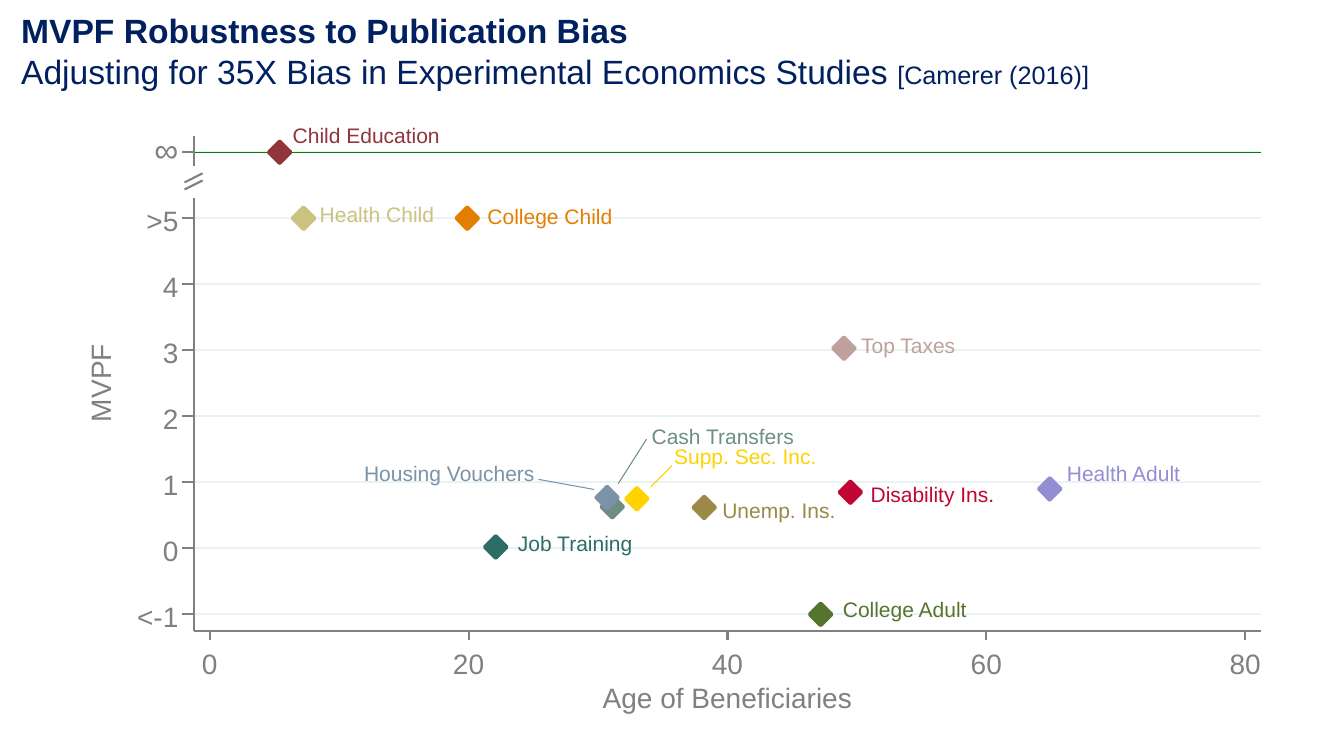
from pptx import Presentation
from pptx.dml.color import RGBColor
from pptx.enum.shapes import MSO_CONNECTOR, MSO_SHAPE
from pptx.enum.text import MSO_ANCHOR, MSO_AUTO_SIZE, PP_ALIGN
from pptx.oxml.ns import qn
from pptx.util import Inches, Pt
from lxml.etree import SubElement

# Content
HEAD = "MVPF Robustness to Publication Bias"
SUB = "Adjusting for 35X Bias in Experimental Economics Studies "
CITE = "[Camerer (2016)]"
NAVY, GREY, GRID, GREEN = "002060", "808080", "EAF2F3", "008000"
ROWS = {-1: "<-1", 0: "0", 1: "1", 2: "2", 3: "3", 4: "4", 5: ">5", 6: "∞"}
AGES = range(0, 81, 20)

# Name, age, MVPF, colour, label offset from the marker in inches
POINTS = [
    ("Cash Transfers", 31.1, 0.63, "6E8E84", (0.39, -0.83)),
    ("Child Education", 5.4, 6, "90353B", (0.13, -0.29)),
    ("College Adult", 47.2, -1, "55752F", (0.22, -0.18)),
    ("College Child", 19.9, 5, "E37E00", (0.2, -0.15)),
    ("Disability Ins.", 49.5, 0.85, "C10534", (0.2, -0.11)),
    ("Health Adult", 64.9, 0.9, "938DD2", (0.17, -0.28)),
    ("Health Child", 7.25, 5, "CAC27E", (0.16, -0.17)),
    ("Housing Vouchers", 30.7, 0.77, "7B92A8", (-2.41, -0.37)),
    ("Job Training", 22.1, 0.02, "2D6D66", (0.22, -0.16)),
    ("Supp. Sec. Inc.", 33, 0.75, "FFD200", (0.37, -0.55)),
    ("Top Taxes", 49, 3.03, "BFA19C", (0.17, -0.16)),
    ("Unemp. Ins.", 38.2, 0.62, "9C8847", (0.18, -0.1)),
]
# Leader ends, as offsets from the marker
LEADS = {
    "Cash Transfers": (0.06, -0.23, 0.34, -0.67),
    "Housing Vouchers": (-0.68, -0.18, -0.13, -0.08),
    "Supp. Sec. Inc.": (0.14, -0.12, 0.35, -0.33),
}

# Plot frame in inches
LEFT, RIGHT, TOP, BASE = 1.92, 12.51, 1.35, 6.26
GAP = (1.65, 1.96)
MID = (LEFT + RIGHT) / 2
SIZE = 0.22


def get_x(age):
    return 2.08 + age * 10.27 / 80


def get_y(mvpf):
    return 5.44 - mvpf * 0.655


def paint(code):
    return RGBColor.from_string(code)


def add_line(x1, y1, x2, y2, code, width=1.5):
    line = slide.shapes.add_connector(
        MSO_CONNECTOR.STRAIGHT, Inches(x1), Inches(y1), Inches(x2), Inches(y2))
    line.line.color.rgb = paint(code)
    line.line.width = Pt(width)
    SubElement(line._element.spPr, qn("a:effectLst"))


def set_frame(frame):
    frame.margin_left = frame.margin_right = 0
    frame.margin_top = frame.margin_bottom = 0
    frame.word_wrap = True
    frame.auto_size = MSO_AUTO_SIZE.NONE
    frame.vertical_anchor = MSO_ANCHOR.TOP


def set_font(font, size, code, bold=False):
    font.name, font.size, font.bold = "Arial", Pt(size), bold
    font.color.rgb = paint(code)


def add_text(text, x, y, wide, high, size, code, align=PP_ALIGN.LEFT):
    box = slide.shapes.add_textbox(
        Inches(x), Inches(y), Inches(wide), Inches(high))
    set_frame(box.text_frame)
    para = box.text_frame.paragraphs[0]
    para.text, para.alignment = text, align
    set_font(para.font, size, code)
    return box


deck = Presentation()
deck.slide_width, deck.slide_height = Inches(13.33), Inches(7.5)
slide = deck.slides.add_slide(deck.slide_layouts[5])

# Title
title = slide.shapes.title
title.left, title.top = Inches(0.21), Inches(0.1)
title.width, title.height = Inches(11.72), Inches(0.81)
frame = title.text_frame
set_frame(frame)
head, sub = frame.paragraphs[0], frame.add_paragraph()
head.text = HEAD
sub.add_run().text = SUB
cite = sub.add_run()
cite.text = CITE
cite.font.size = Pt(18)
for para in (head, sub):
    para.alignment = PP_ALIGN.LEFT
    set_font(para.font, 24, NAVY, para is head)

# Grid lines, with the infinity line in green
for mvpf in ROWS:
    add_line(LEFT, get_y(mvpf), RIGHT, get_y(mvpf), GRID)
add_line(LEFT, get_y(6), RIGHT, get_y(6), GREEN, 0.75)

# Markers, labels and leaders
for name, age, mvpf, code, (dx, dy) in POINTS:
    x, y = get_x(age), get_y(mvpf)
    mark = slide.shapes.add_shape(
        MSO_SHAPE.DIAMOND, Inches(x - SIZE / 2), Inches(y - SIZE / 2),
        Inches(SIZE), Inches(SIZE))
    mark.shadow.inherit = False
    mark.fill.solid()
    mark.fill.fore_color.rgb = mark.line.color.rgb = paint(code)
    mark.line.width = Pt(2.5)
    add_text(name, x + dx, y + dy, 1.88, 0.3, 15, code)
    if name in LEADS:
        x1, y1, x2, y2 = LEADS[name]
        add_line(x + x1, y + y1, x + x2, y + y2, code, 0.75)

# MVPF axis with its break
add_line(LEFT, BASE, LEFT, GAP[1], GREY)
add_line(LEFT, GAP[0], LEFT, TOP, GREY)
for y in (1.81, 1.88):
    add_line(LEFT - 0.09, y, LEFT + 0.09, y - 0.09, GREY)
for mvpf, text in ROWS.items():
    y = get_y(mvpf)
    add_line(LEFT, y, LEFT - 0.11, y, GREY)
    size, lift = (24, 0.23) if text == "∞" else (20, 0.15)
    add_text(text, 1.07, y - lift, 0.7, 0.39, size, GREY, PP_ALIGN.RIGHT)
name = add_text("MVPF", 0.57, (TOP + BASE) / 2 - 0.2, 0.9, 0.39, 20, GREY,
                PP_ALIGN.CENTER)
name.rotation = 270

# Age axis
add_line(LEFT, BASE, RIGHT, BASE, GREY)
for age in AGES:
    x = get_x(age)
    add_line(x, BASE, x, BASE + 0.09, GREY)
    add_text(str(age), x - 0.3, 6.41, 0.6, 0.39, 20, GREY, PP_ALIGN.CENTER)
add_text("Age of Beneficiaries", MID - 1.4, 6.75, 2.8, 0.39, 20, GREY,
         PP_ALIGN.CENTER)

deck.save("out.pptx")
